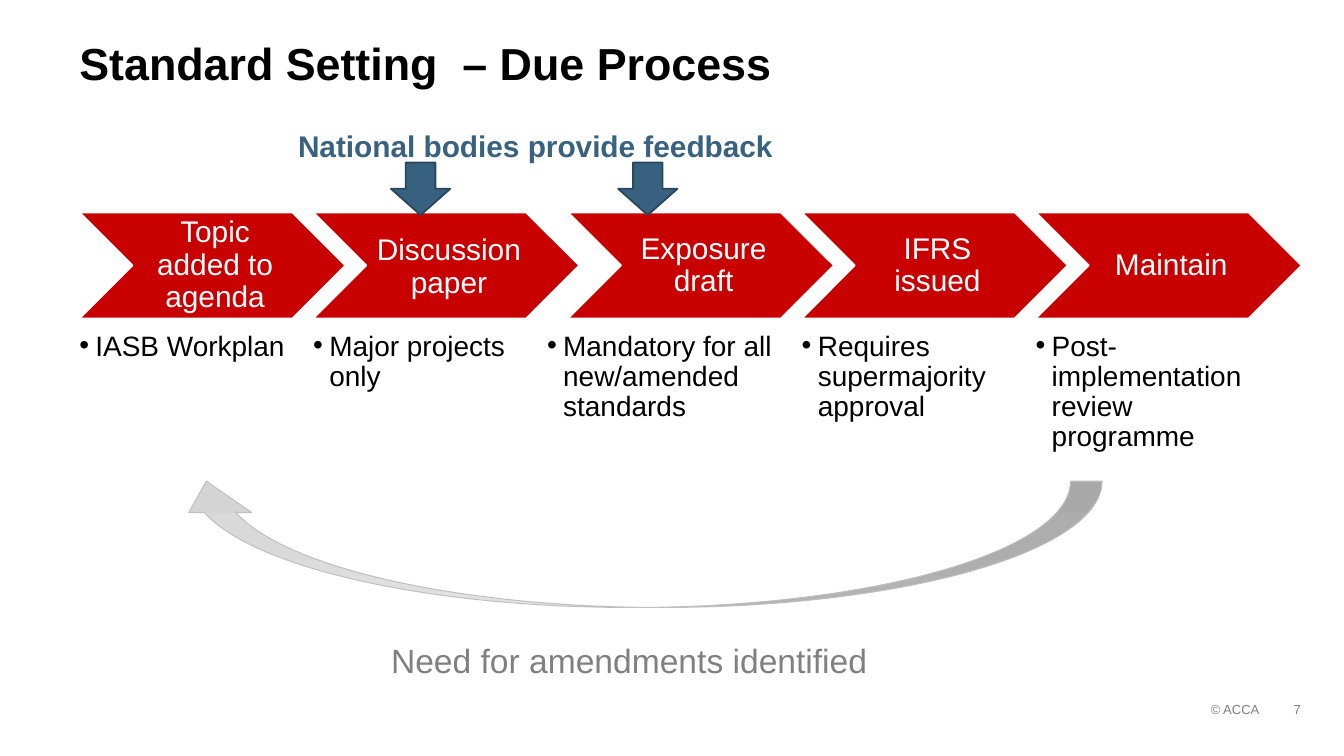
import copy

import pptx
import pptx.dml.color
import pptx.enum.shapes
import pptx.enum.text
import pptx.oxml.ns
import pptx.util
from lxml import etree

Inches = pptx.util.Inches
Pt = pptx.util.Pt
RGB = pptx.dml.color.RGBColor
Shape = pptx.enum.shapes.MSO_SHAPE
Align = pptx.enum.text.PP_ALIGN
Anchor = pptx.enum.text.MSO_ANCHOR
qn = pptx.oxml.ns.qn

RED = RGB(0xC8, 0x00, 0x00)
WHITE = RGB(0xFF, 0xFF, 0xFF)
BLACK = RGB(0x00, 0x00, 0x00)
GREY = RGB(0x80, 0x80, 0x80)
FOOT = RGB(0x7F, 0x7F, 0x7F)
RIM = RGB(0xBF, 0xBF, 0xBF)
INK = RGB(0x38, 0x62, 0x7F)
BLUE = RGB(0x38, 0x61, 0x7F)
NAVY = RGB(0x29, 0x48, 0x5E)
FADE = [RGB(0xE2, 0xE2, 0xE2), RGB(0xD9, 0xD9, 0xD9), RGB(0xD4, 0xD4, 0xD4)]

# Label runs (text, size), bullet text, column width
STEPS = [
    ([("Topic added to agenda", 16)], "IASB Workplan", 1.58),
    ([("Discussion", 16), (" ", 18), ("paper", 16)],
     "Major projects only", 1.58),
    ([("Exposure draft", 16)],
     "Mandatory for all new/amended standards", 1.89),
    ([("IFRS issued", 16)], "Requires supermajority approval", 1.58),
    ([("Maintain", 16)], "Post-implementation review programme", 1.58),
]
LEFT, PITCH, BASE = 0.59, 1.74, 1.58


def add_text(slide, box, runs, color, align=Align.LEFT, bold=False,
             inset=(0, 0, 0, 0), anchor=Anchor.TOP, space=None, bullet=False):
    frame = slide.shapes.add_textbox(*map(Inches, box)).text_frame
    frame.word_wrap = True
    frame.vertical_anchor = anchor
    (frame.margin_left, frame.margin_top,
     frame.margin_right, frame.margin_bottom) = map(Inches, inset)
    para = frame.paragraphs[0]
    para.alignment = align
    if bullet:
        para.level = 1
        props = para._p.get_or_add_pPr()
        props.set("marL", str(Inches(0.12)))
        props.set("indent", str(-Inches(0.12)))
        etree.SubElement(props, qn("a:buFont")).set("typeface", "Arial")
        etree.SubElement(props, qn("a:buChar")).set("char", "•")
    if space:
        para.line_spacing = space
    for text, size in runs:
        run = para.add_run()
        run.text = text
        font = run.font
        font.name, font.size, font.bold = "Arial", Pt(size), bold
        font.color.rgb = color


def add_shape(slide, kind, box, fill, line, width):
    shape = slide.shapes.add_shape(kind, *map(Inches, box))
    shape.shadow.inherit = False
    if fill:
        shape.fill.solid()
        shape.fill.fore_color.rgb = fill
    shape.line.color.rgb = line
    shape.line.width = Pt(width)
    return shape


def add_step(slide, left, width, label, note):
    """Draw one step and return where its chevron starts."""
    start = left + (width - BASE) / 2
    add_shape(slide, Shape.CHEVRON, (start, 1.58, 1.98, 0.79), RED, WHITE, 1)
    add_text(slide, (start + 0.39, 1.58, 1.19, 0.79), label, WHITE,
             Align.CENTER, inset=(0.07, 0.02, 0.02, 0.02),
             anchor=Anchor.MIDDLE, space=0.9)
    add_text(slide, (left, 2.47, width, 1.06), [(note, 15)], BLACK,
             space=0.9, bullet=True)
    return start


def add_loop(slide):
    loop = add_shape(slide, Shape.CURVED_DOWN_ARROW, (1.3, 3.58, 6.9, 0.94),
                     None, RIM, 0.5)
    loop.rotation = 180
    loop.fill.gradient()
    loop.fill.gradient_angle = 270
    # A third stop is copied from the last one
    stops = loop._element.spPr.find(qn("a:gradFill")).find(qn("a:gsLst"))
    stops.append(copy.deepcopy(stops[-1]))
    for index, (stop, color) in enumerate(zip(loop.fill.gradient_stops, FADE)):
        stop.position = index / 2
        stop.color.rgb = color


def main():
    deck = pptx.Presentation()
    deck.slide_width = Inches(10)
    deck.slide_height = deck.slide_width * 9 // 16
    slide = deck.slides.add_slide(deck.slide_layouts[6])

    # Footer and title
    add_text(slide, (7.13, 5.22, 2.24, 0.12), [("© ACCA", 7)], FOOT,
             Align.RIGHT)
    add_text(slide, (9.45, 5.22, 0.23, 0.13), [("7", 7)], FOOT, Align.RIGHT)
    add_text(slide, (LEFT, 0.31, 8.58, 0.39),
             [("Standard Setting  – Due Process", 24)], BLACK,
             bold=True, space=0.9)

    # Process steps, each a pitch after the chevron before it
    left = LEFT
    for label, note, width in STEPS:
        left = add_step(slide, left, width, label, note) + PITCH

    # Return loop
    add_loop(slide)
    pad = (0, 0.05, 0, 0.05)
    add_text(slide, (2.91, 4.71, 3.68, 0.4),
             [("Need for amendments identified", 18)], GREY, inset=pad)

    # Feedback
    add_text(slide, (2.2, 0.9, 3.57, 0.37),
             [("National bodies provide feedback", 16)], INK,
             Align.CENTER, bold=True, inset=pad)
    for x in (2.91, 4.6):
        add_shape(slide, Shape.DOWN_ARROW, (x, 1.21, 0.44, 0.39),
                  BLUE, NAVY, 1)

    deck.save("out.pptx")


if __name__ == "__main__":
    main()
